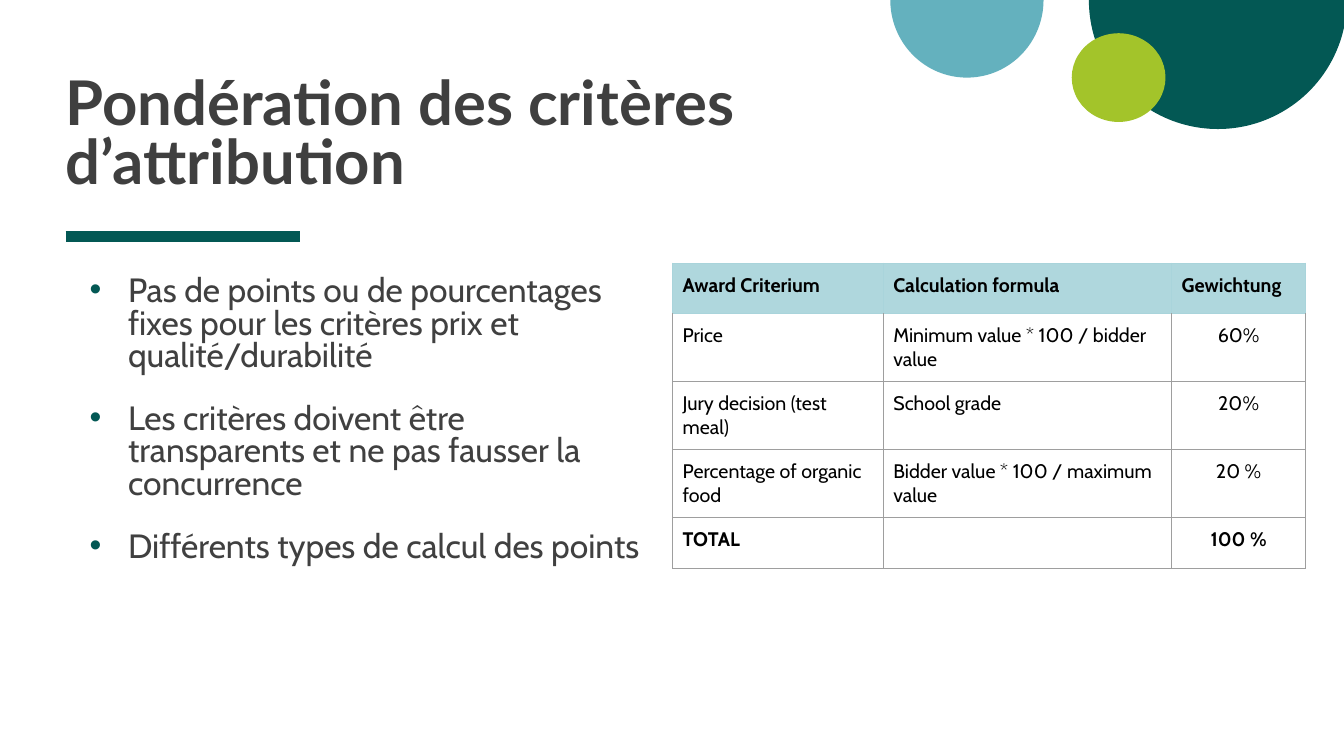
from lxml.etree import SubElement
from pptx import Presentation
from pptx.dml.color import RGBColor
from pptx.enum.shapes import MSO_CONNECTOR, MSO_SHAPE
from pptx.enum.text import MSO_ANCHOR, MSO_AUTO_SIZE, PP_ALIGN
from pptx.oxml.ns import qn
from pptx.util import Inches, Pt

TITLE = "Pondération des critères d’attribution"
BULLETS = [
    "Pas de points ou de pourcentages fixes pour les critères prix et qualité/durabilité",
    "Les critères doivent être transparents et ne pas fausser la concurrence",
    "Différents types de calcul des points",
]
CRITERIA = [
    ("Award Criterium", "Calculation formula", "Gewichtung"),
    ("Price", "Minimum value * 100 / bidder value", "60%"),
    ("Jury decision (test meal)", "School grade", "20%"),
    ("Percentage of organic food", "Bidder value * 100 / maximum value", "20 %"),
    ("TOTAL", "", "100 %"),
]
COLUMN_WIDTHS = [2.09, 2.86, 1.33]
ROW_HEIGHT = 0.5

THEME = {
    "green": "035854", "blue": "64B1BE", "lime": "A3C42A",
    "header": "AFD7DD", "header_edge": "A9D4DB", "edge": "9E9E9E",
    "title": {"name": "Lato", "size": Pt(44), "bold": True, "color": "3F3F3F"},
    "body": {"name": "Cabin", "size": Pt(24), "bold": False, "color": "404040"},
    "cell": {"name": "Cabin", "size": Pt(14), "bold": False, "color": "000000"},
}

# shape, left, top, width, height, colour
CIRCLES = [
    (MSO_SHAPE.PIE, 10.8, -1.28, 2.56, 2.56, "green"),
    (MSO_SHAPE.PIE, 8.83, -0.77, 1.52, 1.54, "blue"),
    (MSO_SHAPE.OVAL, 10.63, 0.33, 0.93, 0.88, "lime"),
]
HALF_TURN = 108  # 180 degrees, in the units of a pie adjustment


def rgb(name):
    return RGBColor.from_string(THEME.get(name, name))


def add_run(p, text, style, **changes):
    r = p.add_run()
    r.text = text
    for key, value in {**THEME[style], **changes}.items():
        if key == "color":
            r.font.color.rgb = rgb(value)
        else:
            setattr(r.font, key, value)


def set_frame(tf, anchor, top=0):
    values = {"word_wrap": True, "auto_size": MSO_AUTO_SIZE.NONE, "vertical_anchor": anchor,
              "margin_left": 0, "margin_top": Inches(top), "margin_right": 0, "margin_bottom": 0}
    for key, value in values.items():
        setattr(tf, key, value)


def add_bullet(p, indent, hanging):
    pPr = p._p.get_or_add_pPr()
    pPr.set("marL", str(Inches(indent)))
    pPr.set("indent", str(-Inches(hanging)))
    SubElement(SubElement(pPr, qn("a:buClr")), qn("a:srgbClr"), val=THEME["green"])
    SubElement(pPr, qn("a:buFont"), typeface="Arial")
    SubElement(pPr, qn("a:buChar"), char="•")


def set_borders(cell, top, other):
    tcPr = cell._tc.get_or_add_tcPr()
    for i, side in enumerate(("lnL", "lnR", "lnT", "lnB")):
        ln = tcPr.makeelement(qn(f"a:{side}"), {"w": str(Pt(0.75))})
        color = THEME[top if side == "lnT" else other]
        SubElement(SubElement(ln, qn("a:solidFill")), qn("a:srgbClr"), val=color)
        tcPr.insert(i, ln)


def add_decoration(slide):
    for kind, left, top, width, height, color in CIRCLES:
        sp = slide.shapes.add_shape(kind, *map(Inches, (left, top, width, height)))
        if kind == MSO_SHAPE.PIE:
            sp.adjustments[0], sp.adjustments[1] = 0, HALF_TURN
        sp.shadow.inherit = False
        sp.fill.solid()
        sp.fill.fore_color.rgb = rgb(color)
        sp.line.fill.background()
    rule = slide.shapes.add_connector(MSO_CONNECTOR.STRAIGHT, *map(Inches, (0.65, 2.35, 2.98, 2.35)))
    rule.line.color.rgb = rgb("green")
    rule.line.width = Pt(8)
    SubElement(rule._element.spPr, qn("a:effectLst"))


def add_title(slide):
    sp = slide.shapes.title
    sp.left, sp.top, sp.width, sp.height = map(Inches, (0.65, 0.21, 7.42, 1.74))
    set_frame(sp.text_frame, MSO_ANCHOR.BOTTOM)
    p = sp.text_frame.paragraphs[0]
    p.alignment, p.line_spacing = PP_ALIGN.LEFT, 0.8
    add_run(p, TITLE, "title")


def add_bullets(slide):
    tf = slide.shapes.add_textbox(*map(Inches, (0.65, 2.5, 5.73, 4.69))).text_frame
    set_frame(tf, MSO_ANCHOR.TOP, top=0.25)
    for i, text in enumerate(BULLETS):
        p = tf.add_paragraph() if i else tf.paragraphs[0]
        add_bullet(p, 0.62, 0.38)
        p.line_spacing = 0.8
        p.space_before = Pt(22 if i else 0)
        add_run(p, text, "body")


def add_criteria(slide):
    size = (sum(COLUMN_WIDTHS), ROW_HEIGHT * len(CRITERIA))
    table = slide.shapes.add_table(len(CRITERIA), len(COLUMN_WIDTHS),
                                   *map(Inches, (6.67, 2.61, *size))).table
    table.first_row = table.horz_banding = False
    for column, width in zip(table.columns, COLUMN_WIDTHS):
        column.width = Inches(width)
    for i, row in enumerate(CRITERIA):
        for j, text in enumerate(row):
            cell = table.cell(i, j)
            for side in ("left", "top", "right", "bottom"):
                setattr(cell, f"margin_{side}", Inches(0.1))
            if i == 0:
                cell.fill.solid()
                cell.fill.fore_color.rgb = rgb("header")
            else:
                cell.fill.background()
            set_borders(cell, "header_edge" if i < 2 else "edge", "edge" if i else "header_edge")
            p = cell.text_frame.paragraphs[0]
            if i and j == 2:
                p.alignment = PP_ALIGN.CENTER
            if text:
                add_run(p, text, "cell", bold=i in (0, len(CRITERIA) - 1))


def main():
    prs = Presentation()
    prs.slide_width, prs.slide_height = Inches(13.33), Inches(7.5)
    slide = prs.slides.add_slide(prs.slide_layouts[5])
    add_decoration(slide)
    add_title(slide)
    add_bullets(slide)
    add_criteria(slide)
    prs.save("out.pptx")


if __name__ == "__main__":
    main()
